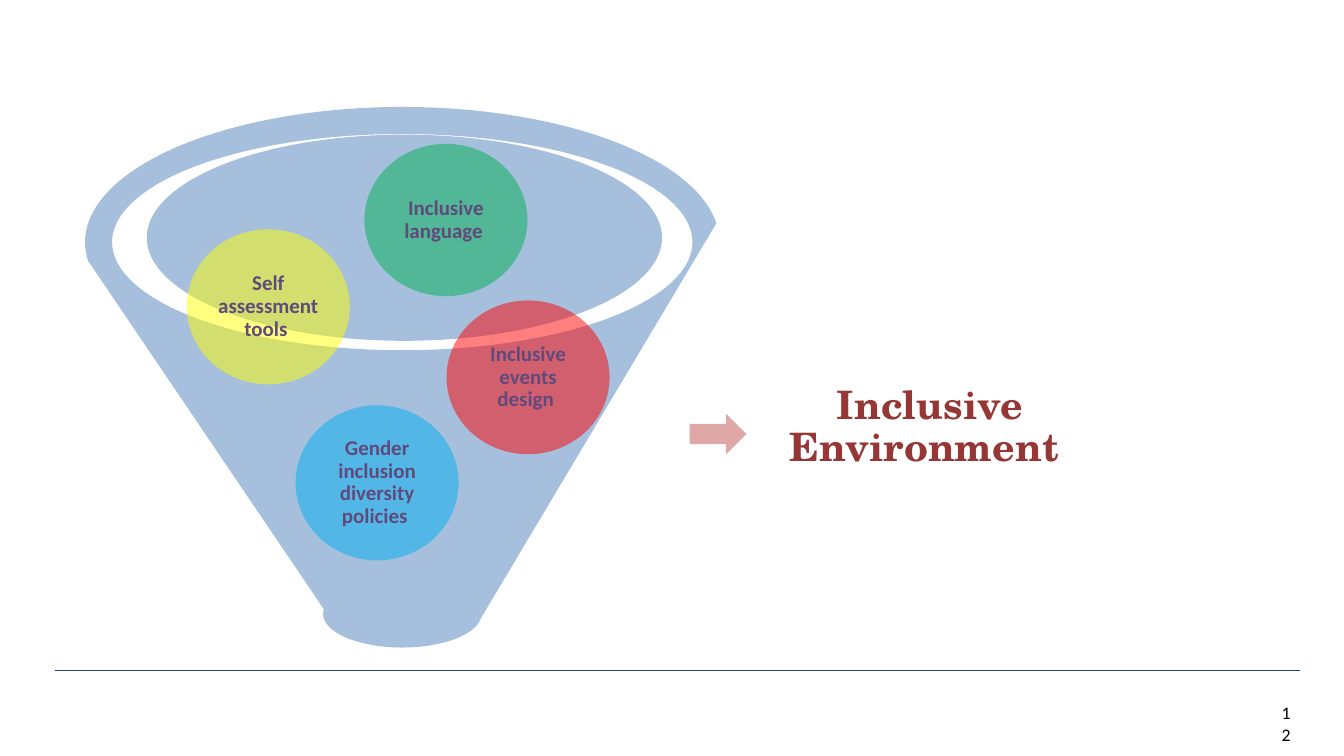
from lxml import etree
from pptx import Presentation
from pptx.dml.color import RGBColor
from pptx.enum.shapes import MSO_CONNECTOR, MSO_SHAPE
from pptx.enum.text import MSO_ANCHOR, PP_ALIGN
from pptx.oxml.ns import qn
from pptx.util import Inches, Pt

FUNNEL, OVAL, ARROW = MSO_SHAPE.FUNNEL, MSO_SHAPE.OVAL, MSO_SHAPE.RIGHT_ARROW
STRAIGHT = MSO_CONNECTOR.STRAIGHT
MIDDLE, TOP = MSO_ANCHOR.MIDDLE, MSO_ANCHOR.TOP
CENTER, LEFT = PP_ALIGN.CENTER, PP_ALIGN.LEFT

BLUE = RGBColor(0x4F, 0x81, 0xBD)
NAVY = RGBColor(0x1F, 0x49, 0x7D)
GREEN = RGBColor(0x00, 0xB0, 0x50)
SKY = RGBColor(0x00, 0xB0, 0xF0)
RED = RGBColor(0xFF, 0x00, 0x00)
YELLOW = RGBColor(0xFF, 0xFF, 0x00)
BRICK = RGBColor(0xC0, 0x50, 0x4D)
MAROON = RGBColor(0x95, 0x37, 0x35)
PURPLE = RGBColor(0x60, 0x4A, 0x7B)
BLACK = RGBColor(0x00, 0x00, 0x00)

BALL_FONT = {"name": "Calibri", "size": Pt(21.3), "bold": True}
RESULT_FONT = {"name": "TeX Gyre Schola", "size": Pt(39.8), "bold": True}
NUMBER_FONT = {"name": "Calibri", "size": Pt(18), "bold": False}
CENTERED = {"alignment": CENTER, "line_spacing": 0.9}
PLAIN = {"alignment": LEFT}

BALL_WIDTH = 12.13
# text, colour, centre across, centre down, height, side margin
BALLS = [
    ("Inclusive language ", GREEN, 33.18, 29.1, 20.15, 0),
    ("Gender inclusion diversity policies ", SKY, 28.06, 63.87, 20.52, 0.21),
    ("Inclusive events design ", RED, 39.29, 49.91, 20.34, 0.42),
    ("Self assessment tools ", YELLOW, 19.96, 40.58, 20.52, 0.42),
]


def set_attributes(target, values):
    for name, value in values.items():
        setattr(target, name, value)


class FunnelSlide:
    """Draws on one page; every length is a percentage of the slide's size."""

    opacity = 50

    def __init__(self, deck):
        self.width, self.height = deck.slide_width, deck.slide_height
        self.page = deck.slides.add_slide(deck.slide_layouts[6])

    def across(self, share):
        return round(self.width * share / 100)

    def down(self, share):
        return round(self.height * share / 100)

    def place(self, left, top, width, height):
        return (self.across(left), self.down(top),
                self.across(width), self.down(height))

    def shape(self, kind, area, color):
        """Add a translucent shape without outline."""
        shape = self.page.shapes.add_shape(kind, *self.place(*area))
        shape.shadow.inherit = False
        shape.fill.solid()
        shape.fill.fore_color.rgb = color
        shape.line.fill.background()
        tint = shape.element.spPr.find(qn("a:solidFill"))[0]
        etree.SubElement(tint, qn("a:alpha"), val=str(self.opacity * 1000))
        return shape

    def rule(self, start, end, level, color):
        line = self.page.shapes.add_connector(
            STRAIGHT, self.across(start), self.down(level),
            self.across(end), self.down(level))
        line.line.color.rgb = color
        line.line.width = Pt(1)
        etree.SubElement(line.element.spPr, qn("a:effectLst"))

    def put_text(self, shape, text, font, color, layout, frame):
        box = shape.text_frame
        set_attributes(box, {"word_wrap": True, **frame})
        para = box.paragraphs[0]
        set_attributes(para, layout)
        span = para.add_run()
        span.text = text
        set_attributes(span.font, font)
        span.font.color.rgb = color

    def ball(self, text, color, center_x, center_y, height, margin):
        area = (center_x - BALL_WIDTH / 2, center_y - height / 2,
                BALL_WIDTH, height)
        side = self.across(margin)
        frame = {"vertical_anchor": MIDDLE, "margin_left": side,
                 "margin_right": side, "margin_top": 0, "margin_bottom": 0}
        self.put_text(self.shape(OVAL, area, color), text, BALL_FONT, PURPLE,
                      CENTERED, frame)

    def label(self, text, area, font, color, layout, frame):
        box = self.page.shapes.add_textbox(*self.place(*area))
        self.put_text(box, text, font, color, layout, frame)


def main():
    deck = Presentation()
    deck.slide_width, deck.slide_height = Inches(18.96), Inches(10.67)
    slide = FunnelSlide(deck)

    slide.rule(4.06, 96.73, 88.75, NAVY)
    slide.label("12", (94.83, 92.41, 1.11, 3.28), NUMBER_FONT, BLACK,
                PLAIN, {"vertical_anchor": TOP})
    slide.shape(FUNNEL, (6.33, 14.15, 47.2, 71.51), BLUE)
    slide.shape(OVAL, (10.92, 17.81, 38.34, 27.27), BLUE)
    for ball in BALLS:
        slide.ball(*ball)

    side = slide.across(2.06)
    slide.label("Inclusive Environment ", (53.64, 49.39, 31.12, 14.43),
                RESULT_FONT, MAROON, CENTERED,
                {"vertical_anchor": MIDDLE, "margin_left": side,
                 "margin_right": side})
    slide.shape(ARROW, (51.32, 54.73, 4.22, 5.34), BRICK)
    deck.save("out.pptx")


if __name__ == "__main__":
    main()
